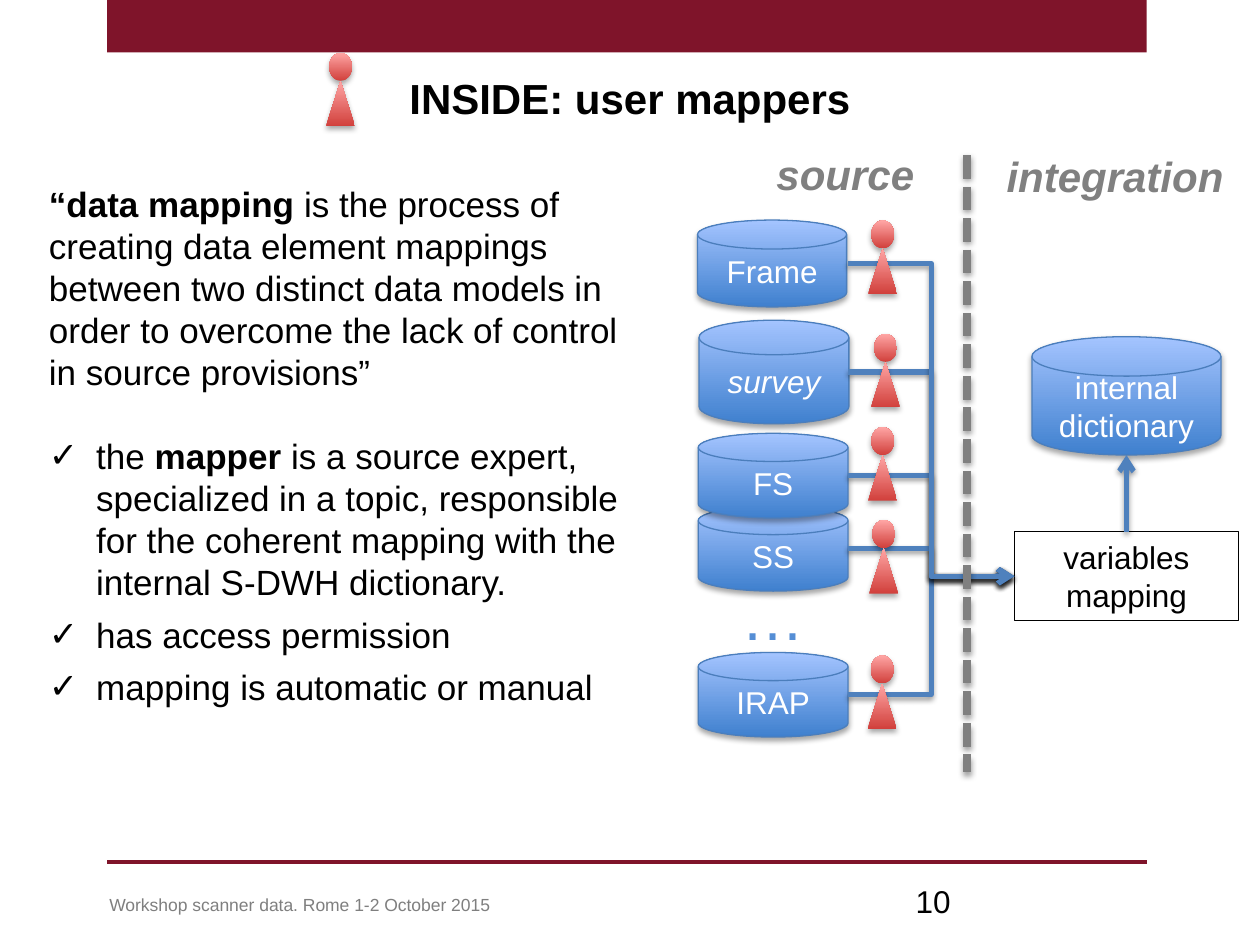
import pptx
import pptx.util
import pptx.dml.color
import pptx.enum.dml
import pptx.enum.shapes
import pptx.enum.text
import pptx.oxml
import pptx.oxml.ns
from lxml import etree

Pt = pptx.util.Pt
SHAPE = pptx.enum.shapes.MSO_SHAPE
CONNECTOR = pptx.enum.shapes.MSO_CONNECTOR
ANCHOR = pptx.enum.text.MSO_ANCHOR
CENTER = pptx.enum.text.PP_ALIGN.CENTER
qn = pptx.oxml.ns.qn
COLORS = {name: pptx.dml.color.RGBColor.from_string(value) for name, value in {
    "maroon": "7F142A", "black": "000000", "white": "FFFFFF", "gray": "808080",
    "footer": "7F7F7F", "disk_low": "3F80CE", "disk_high": "A4C4FF",
    "disk_edge": "4B7EBC", "dots": "558ED5", "flow": "4F81BD",
    "person_low": "D1403C", "person_high": "FFA6A5"}.items()}

deck = pptx.Presentation()
deck.slide_width, deck.slide_height = Pt(720), Pt(540)
slide = deck.slides.add_slide(deck.slide_layouts[6])
shapes = slide.shapes


def style(item, fill=None, line=None, width=0.75, shadow=None):
    """Set fill (one colour, or a low/high pair), line and shadow (distance, opacity)."""
    if line:
        item.line.color.rgb = COLORS[line]
        item.line.width = Pt(width)
    else:
        item.line.fill.background()
    if hasattr(item, "fill"):
        if isinstance(fill, tuple):
            item.fill.gradient()
            item.fill.gradient_angle = 90
            for stop, color in zip(item.fill.gradient_stops, fill):
                stop.color.rgb = COLORS[color]
        elif fill:
            item.fill.solid()
            item.fill.fore_color.rgb = COLORS[fill]
        else:
            item.fill.background()
        item.shadow.inherit = False
        effects = item._element.spPr.find(qn("a:effectLst"))
    else:
        effects = etree.SubElement(item._element.spPr, qn("a:effectLst"))
    if shadow:
        distance, opacity = shadow
        outer = etree.SubElement(effects, qn("a:outerShdw"), blurRad=str(Pt(3.15)),
                                 dist=str(Pt(distance)), dir="5400000", rotWithShape="0")
        color = etree.SubElement(outer, qn("a:srgbClr"), val="000000")
        etree.SubElement(color, qn("a:alpha"), val=str(opacity * 1000))


def write(paragraph, text, color="black", size=18, **formats):
    """Add one run with its font settings."""
    run = paragraph.add_run()
    run.text = text
    run.font.color.rgb = COLORS[color]
    for name, value in {"name": "Arial", "size": Pt(size), **formats}.items():
        setattr(run.font, name, value)


SHAPE_SHADOW, LINE_SHADOW = (1.8, 35), (1.6, 38)

# Page band and footer rule
band = shapes.add_shape(SHAPE.RECTANGLE, Pt(61.2), 0, Pt(594), Pt(30))
style(band, fill="maroon")
rule = shapes.add_connector(CONNECTOR.STRAIGHT, Pt(61.2), Pt(492.5), Pt(655.2), Pt(492.5))
style(rule, line="maroon", width=2)

# Definition and checklist: (runs with bold flag, is check item, space after)
points = [
    ([("“data mapping", True),
      (" is the process of creating data element mappings between two distinct data models "
       "in order to overcome the lack of control in source provisions”", False)], False, 24),
    ([("the ", False), ("mapper", True),
      (" is a source expert, specialized in a topic, responsible for the coherent mapping "
       "with the internal S-DWH dictionary.", False)], True, 6),
    ([("has access permission", False)], True, 6),
    ([("mapping is automatic or manual", False)], True, 0),
]
explanation = shapes.add_textbox(Pt(20.9), Pt(100.8), Pt(347.8), Pt(310.3)).text_frame
explanation.word_wrap = True
for index, (runs, checked, after) in enumerate(points):
    point = explanation.add_paragraph() if index else explanation.paragraphs[0]
    point.space_after = Pt(after)
    if checked:
        properties = point._p.get_or_add_pPr()
        properties.set("marL", str(Pt(27)))
        properties.set("indent", str(Pt(-27)))
        etree.SubElement(properties, qn("a:buFont"), typeface="Arial")
        etree.SubElement(properties, qn("a:buChar"), char="✓")
    for text, bold in runs:
        write(point, text, size=20, bold=bold)

# Sources and the internal dictionary: (label, left, top, width, height, italic)
disks = [
    ("IRAP", 399, 372.8, 85.6, 48.4, False),
    ("…", 399, 331.2, 85.6, 34.6, False),
    ("survey", 399.5, 183, 85.6, 59.2, True),
    ("SS", 399, 289.4, 85.6, 48.4, False),
    ("FS", 399, 247.6, 85.6, 48.4, False),
    ("Frame", 398.6, 125.8, 85.2, 49.6, False),
    ("internal dictionary", 589.7, 192.4, 108, 67.6, False),
]
for label, left, top, width, height, italic in disks:
    disk = shapes.add_shape(SHAPE.FLOWCHART_MAGNETIC_DISK,
                            Pt(left), Pt(top), Pt(width), Pt(height))
    disk.text_frame.vertical_anchor = ANCHOR.MIDDLE
    caption = disk.text_frame.paragraphs[0]
    caption.alignment = CENTER
    if label == "…":
        style(disk)
        write(caption, label, "dots", 36)
    else:
        style(disk, ("disk_low", "disk_high"), "disk_edge", shadow=SHAPE_SHADOW)
        write(caption, label, "white", italic=italic)

# Variables mapping box
mapping = shapes.add_shape(SHAPE.RECTANGLE, Pt(579.6), Pt(303.8), Pt(128.2), Pt(51))
style(mapping, line="black")
mapping.text_frame.vertical_anchor = ANCHOR.TOP
mapping_label = mapping.text_frame.paragraphs[0]
mapping_label.alignment = CENTER
write(mapping_label, "variables mapping")

# Flows from each source into the mapping, and on to the dictionary
flows = []
for source_y in (396.8, 212.6, 271.8, 313.6, 150.6):
    flow = shapes.add_connector(CONNECTOR.ELBOW, Pt(484.6), Pt(source_y), Pt(579.6), Pt(329.3))
    flow.end_connect(mapping, 1)
    flows.append(flow)
to_dictionary = shapes.add_connector(CONNECTOR.STRAIGHT, Pt(643.7), Pt(303.8), Pt(643.7), Pt(260))
to_dictionary.begin_connect(mapping, 0)
for flow in flows + [to_dictionary]:
    style(flow, line="flow", width=3, shadow=LINE_SHADOW)
    etree.SubElement(flow.line._get_or_add_ln(), qn("a:tailEnd"), type="arrow")

# Divider between source and integration
divider = shapes.add_connector(CONNECTOR.STRAIGHT, Pt(552.6), Pt(88.6), Pt(552.6), Pt(441.4))
divider.line.dash_style = pptx.enum.dml.MSO_LINE.SQUARE_DOT
style(divider, line="gray", width=4.5, shadow=LINE_SHADOW)

# Headings, title, footer and page number
heading = {"color": "gray", "size": 24, "bold": True, "italic": True}
labels = [
    ("source", 436.6, 81.4, 94.3, 36, False, None, heading),
    ("integration", 568.1, 82.4, 139.7, 36, False, None, heading),
    ("INSIDE: user mappers", 36, 37.8, 648, 44.6, True, CENTER, {"size": 24, "bold": True}),
    ("Workshop scanner data. Rome 1-2 October 2015", 55.4, 507.6, 481.7, 19.4, True, None,
     {"color": "footer", "size": 10}),
    ("10", 516.2, 500.4, 167.8, 28.8, True, None, {}),
]
for text, left, top, width, height, wrap, alignment, formats in labels:
    frame = shapes.add_textbox(Pt(left), Pt(top), Pt(width), Pt(height)).text_frame
    frame.word_wrap = wrap
    frame.paragraphs[0].alignment = alignment
    write(frame.paragraphs[0], text, **formats)

# User mappers: centre and top of each figure
for center, top in ((504.4, 244.1), (505, 297.2), (504.1, 374.6),
                    (506, 190.8), (504.4, 126), (194.6, 30.2)):
    person = shapes.add_group_shape().shapes
    for part, width, height, offset in ((SHAPE.OVAL, 13, 16, 0),
                                        (SHAPE.ISOSCELES_TRIANGLE, 16.6, 26, 16)):
        figure = person.add_shape(part, Pt(center - width / 2), Pt(top + offset),
                                  Pt(width), Pt(height))
        style(figure, ("person_low", "person_high"), shadow=SHAPE_SHADOW)

deck.save("out.pptx")
